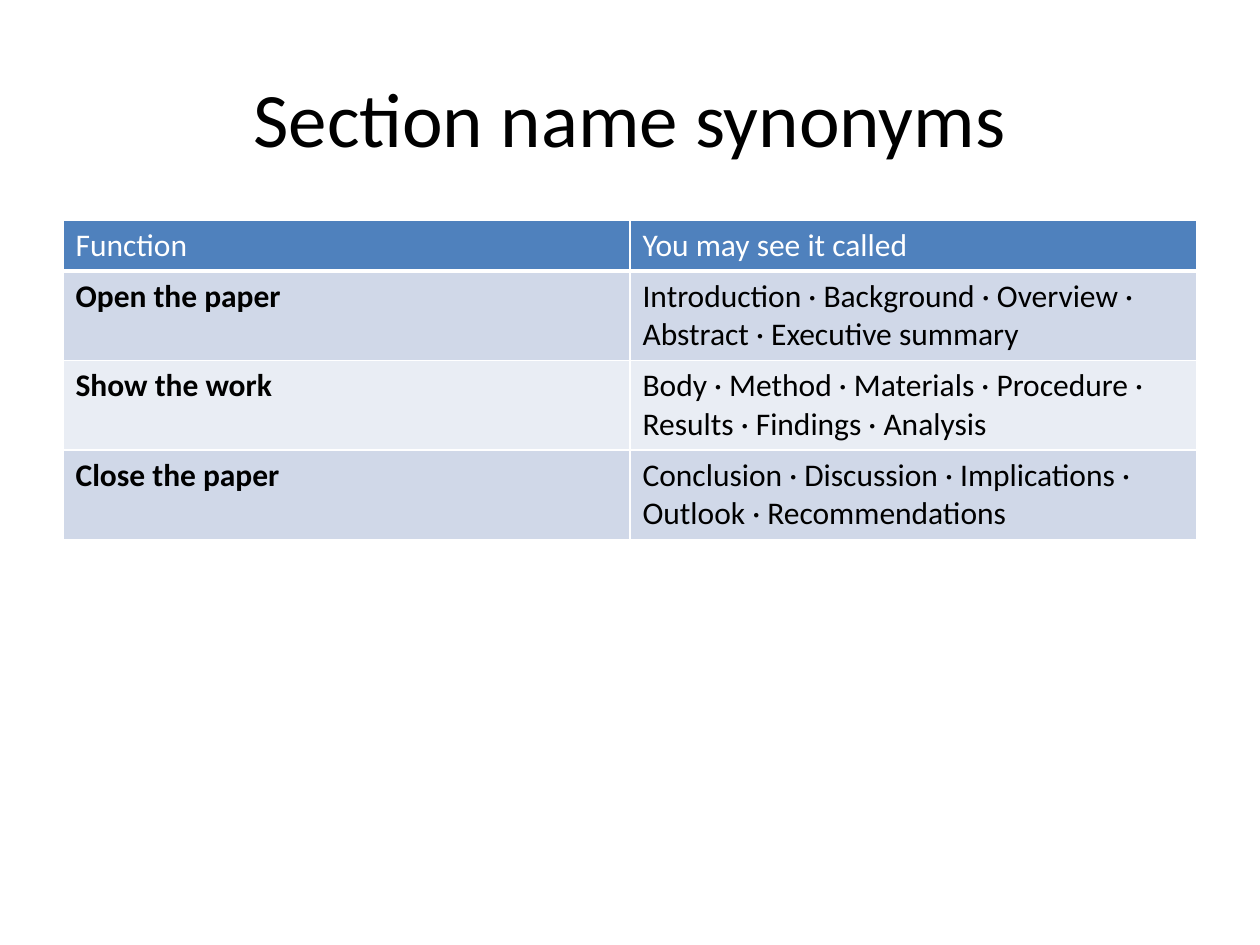
"""Build a slide with a title and a table of section name synonyms."""
import lxml.etree
import pptx
import pptx.dml.color
import pptx.enum.text
import pptx.oxml.ns
import pptx.util

Inches = pptx.util.Inches
COLORS = {
    "text": "000000",
    "header_text": "FFFFFF",
    "header": "4F81BD",
    "band_dark": "D0D8E8",
    "band_light": "E9EDF4",
    "border": "FFFFFF",
}
ROWS = [
    ("Function", "You may see it called"),
    ("Open the paper", "Introduction · Background · Overview · Abstract · Executive summary"),
    ("Show the work", "Body · Method · Materials · Procedure · Results · Findings · Analysis"),
    ("Close the paper", "Conclusion · Discussion · Implications · Outlook · Recommendations"),
]


def rgb(name):
    return pptx.dml.color.RGBColor.from_string(COLORS[name])


def add_span(para, text, size, color, bold=False):
    span = para.add_run()
    span.text = text
    span.font.name = "Calibri"
    span.font.size = pptx.util.Pt(size)
    span.font.bold = bold
    span.font.color.rgb = rgb(color)


def add_title(page, text):
    box = page.shapes.add_textbox(Inches(0.5), Inches(0.3), Inches(9), Inches(1.25))
    frame = box.text_frame
    frame.word_wrap = True
    frame.vertical_anchor = pptx.enum.text.MSO_ANCHOR.MIDDLE
    para = frame.paragraphs[0]
    para.alignment = pptx.enum.text.PP_ALIGN.CENTER
    add_span(para, text, 44, "text")


def set_borders(cell, bottom_width):
    properties = cell._tc.get_or_add_tcPr()
    widths = {"lnL": 1, "lnR": 1, "lnT": 1, "lnB": bottom_width}
    for position, (side, width) in enumerate(widths.items()):
        line = lxml.etree.Element(pptx.oxml.ns.qn(f"a:{side}"), w=str(pptx.util.Pt(width)))
        fill = lxml.etree.SubElement(line, pptx.oxml.ns.qn("a:solidFill"))
        lxml.etree.SubElement(fill, pptx.oxml.ns.qn("a:srgbClr"), val=COLORS["border"])
        properties.insert(position, line)


def fill_cell(cell, text, row, column):
    is_header = row == 0
    band = "header" if is_header else ("band_light", "band_dark")[row % 2]
    cell.fill.solid()
    cell.fill.fore_color.rgb = rgb(band)
    set_borders(cell, 3 if is_header else 1)
    color = "header_text" if is_header else "text"
    add_span(cell.text_frame.paragraphs[0], text, 18, color, not is_header and column == 0)


def add_synonym_table(page):
    frame = page.shapes.add_table(
        len(ROWS), len(ROWS[0]), Inches(0.5), Inches(1.75), Inches(9), Inches(2.53)
    )
    table = frame.table
    for row, texts in enumerate(ROWS):
        table.rows[row].height = Inches(0.71 if row else 0.4)
        for column, text in enumerate(texts):
            fill_cell(table.cell(row, column), text, row, column)


def main():
    deck = pptx.Presentation()
    deck.slide_width, deck.slide_height = Inches(10), Inches(7.5)
    page = deck.slides.add_slide(deck.slide_layouts[6])
    add_title(page, "Section name synonyms")
    add_synonym_table(page)
    deck.save("out.pptx")


if __name__ == "__main__":
    main()
